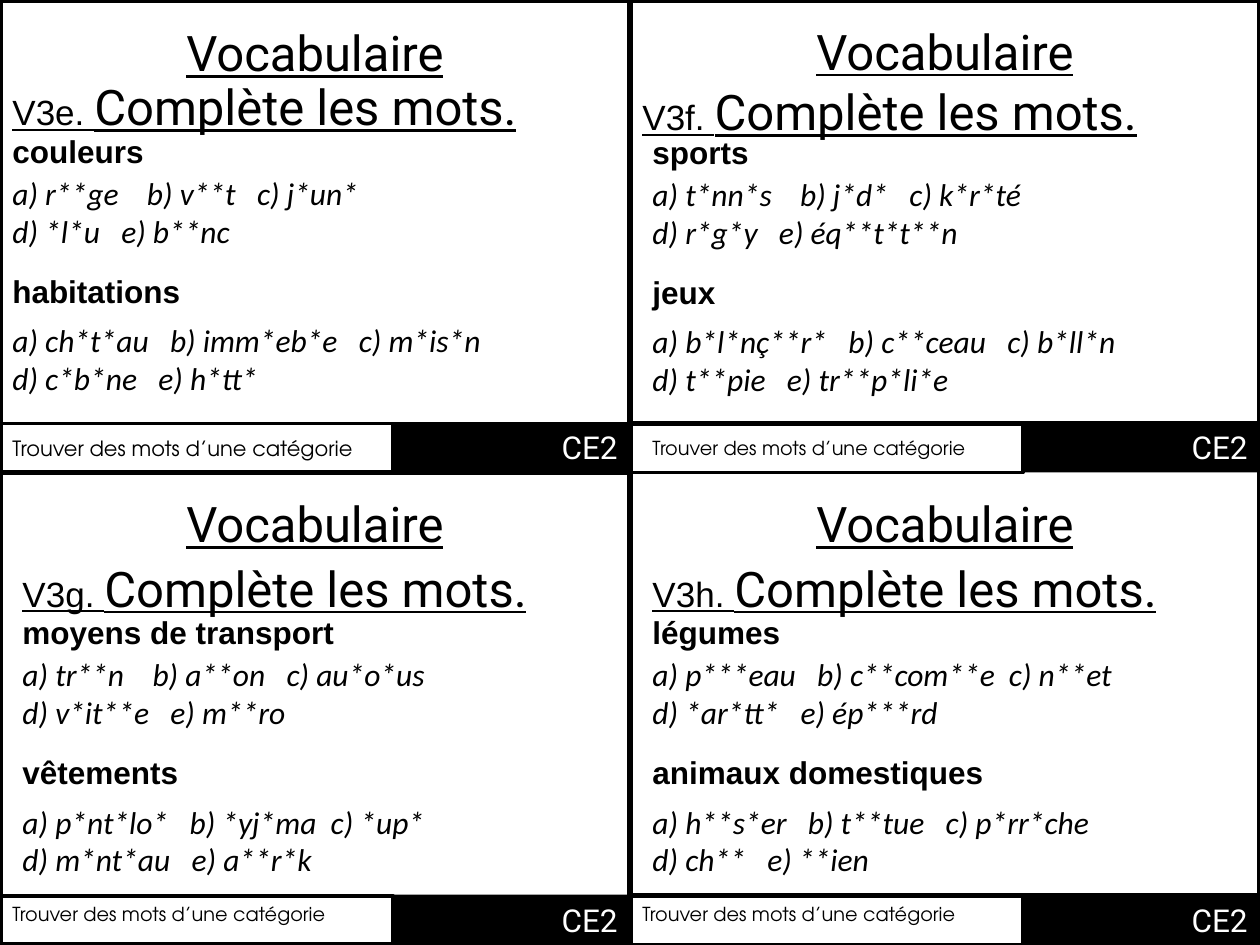
from dataclasses import dataclass

from pptx import Presentation
from pptx.dml.color import RGBColor
from pptx.enum.shapes import MSO_SHAPE
from pptx.enum.text import MSO_ANCHOR, MSO_AUTO_SIZE, PP_ALIGN
from pptx.util import Inches, Pt

RECTANGLE = MSO_SHAPE.RECTANGLE
LEFT, CENTER, RIGHT = PP_ALIGN.LEFT, PP_ALIGN.CENTER, PP_ALIGN.RIGHT
TOP = MSO_ANCHOR.TOP
GROW = MSO_AUTO_SIZE.SHAPE_TO_FIT_TEXT
BLACK = RGBColor(0, 0, 0)
WHITE = RGBColor(255, 255, 255)

SLIDE_W, SLIDE_H = 10, 7.5
CARD_W, CARD_H = SLIDE_W / 2, SLIDE_H / 2
LEGEND_W = CARD_W * 0.624
FOOTER_TOP = 3.36
INDENT = 0.08


@dataclass
class Card:
    """One quarter of the slide, with offsets measured from its corner."""
    column: int
    row: int
    code: str
    groups: list
    title_top: float = 0.12
    task_left: float = INDENT
    task_top: float = 0.63
    words_left: float = INDENT
    words_top: float = 1.07
    legend_left: float = 0
    legend_top: float = FOOTER_TOP
    legend_size: int = 11
    frame_shift: float = 0

    def place(self, left, top):
        """Return slide coordinates for an offset inside the card."""
        return self.column * CARD_W + left, self.row * CARD_H + top


CARDS = [
    Card(0, 0, "V3e. ", [
        ("couleurs", 1.25, ["a) r**ge    b) v**t   c) j*un*", "d) *l*u   e) b**nc"]),
        ("habitations", 2.03, ["a) ch*t*au   b) imm*eb*e   c) m*is*n", "d) c*b*ne   e) h*tt*"]),
    ], title_top=0.13, task_left=0, task_top=0.56, words_left=0, words_top=1,
        legend_top=3.41, legend_size=12),
    Card(1, 0, "V3f. ", [
        ("sports", 1.25, ["a) t*nn*s    b) j*d*   c) k*r*té", "d) r*g*y   e) éq**t*t**n"]),
        ("jeux", 2.66, ["a) b*l*nç**r*   b) c**ceau   c) b*ll*n", "d) t**pie   e) tr**p*li*e"]),
    ], task_left=0, task_top=0.6, words_top=1.01, legend_left=INDENT, legend_top=3.41),
    Card(0, 1, "V3g. ", [
        ("moyens de transport", 3.75, ["a) tr**n    b) a**on   c) au*o*us", "d) v*it**e   e) m**ro"]),
        ("vêtements", 2.97, ["a) p*nt*lo*   b) *yj*ma  c) *up*", "d) m*nt*au   e) a**r*k"]),
    ]),
    Card(1, 1, "V3h. ", [
        ("légumes", 1.25, ["a) p***eau   b) c**com**e  c) n**et", "d) *ar*tt*   e) ép***rd"]),
        ("animaux domestiques", 4.45, ["a) h**s*er   b) t**tue   c) p*rr*che", "d) ch**   e) **ien"]),
    ], frame_shift=-0.39),
]


def set_font(font, name, size, color=BLACK, **style):
    """Set typeface, size, colour and any bold, italic or underline."""
    font.name, font.size = name, Pt(size)
    font.color.rgb = color
    for key, value in style.items():
        setattr(font, key, value)


def add_box(slide, position, size, fill=None, line_width=0):
    """Add a plain rectangle with an optional fill and black outline."""
    box = slide.shapes.add_shape(RECTANGLE, *map(Inches, position + size))
    box.shadow.inherit = False
    if fill is None:
        box.fill.background()
    else:
        box.fill.solid()
        box.fill.fore_color.rgb = fill
    if line_width:
        box.line.color.rgb = BLACK
        box.line.width = Pt(line_width)
    else:
        box.line.fill.background()
    return box


def fill_text(frame, lines, font, size, align=LEFT, hanging=0, **style):
    """Write one paragraph per line in a single font."""
    frame.word_wrap = True
    frame.auto_size = GROW
    frame.vertical_anchor = TOP
    for index, line in enumerate(lines):
        paragraph = frame.add_paragraph() if index else frame.paragraphs[0]
        paragraph.text = line
        paragraph.alignment = align
        set_font(paragraph.font, font, size, **style)
        if hanging:
            properties = paragraph._p.get_or_add_pPr()
            properties.set("marL", str(Inches(hanging)))
            properties.set("indent", str(-Inches(hanging)))


def add_text(slide, position, size, lines, font, points, **options):
    """Add a text box and return its frame."""
    frame = slide.shapes.add_textbox(*map(Inches, position + size)).text_frame
    fill_text(frame, lines, font, points, **options)
    return frame


def add_task(slide, card):
    """Add the underlined exercise code and its instruction."""
    frame = add_text(slide, card.place(card.task_left, card.task_top), (4.92, 0.57),
                     [card.code], "Arial", 20, underline=True)
    instruction = frame.paragraphs[0].add_run()
    instruction.text = "Complète les mots."
    set_font(instruction.font, "Roboto", 28, underline=True)


def add_footer(slide, card):
    """Add the skill legend and the class level at the foot of a card."""
    level = add_box(slide, card.place(LEGEND_W, 3.35), (CARD_W - LEGEND_W, 0.4), BLACK)
    fill_text(level.text_frame, ["CE2"], "Roboto", 18, align=RIGHT, color=WHITE)
    add_box(slide, card.place(0, FOOTER_TOP), (LEGEND_W, 0.39), line_width=2)
    add_text(slide, card.place(card.legend_left, card.legend_top), (LEGEND_W, 0.3),
             ["Trouver des mots d’une catégorie"], "TeX Gyre Adventor", card.legend_size)


def add_words(slide, card):
    """Add each category heading with its incomplete words."""
    for index, (category, width, words) in enumerate(card.groups):
        top = card.words_top + index * 1.11
        add_text(slide, card.place(card.words_left, top), (width, 0.4),
                 [category], "Arial", 18, bold=True)
        add_text(slide, card.place(card.words_left, top + 0.33 + index * 0.06), (4.38, 0.71),
                 words, "Calibri", 18, hanging=0.38, italic=True)


def main():
    """Build the slide of four vocabulary cards."""
    presentation = Presentation()
    presentation.slide_width, presentation.slide_height = Inches(SLIDE_W), Inches(SLIDE_H)
    slide = presentation.slides.add_slide(presentation.slide_layouts[6])
    for card in CARDS:
        add_box(slide, card.place(0, card.frame_shift), (CARD_W, CARD_H), WHITE, 3)
    for card in CARDS:
        add_text(slide, card.place(0, card.title_top), (CARD_W, 0.57),
                 ["Vocabulaire"], "Roboto", 28, align=CENTER, underline=True)
        add_task(slide, card)
        add_footer(slide, card)
        add_words(slide, card)
    presentation.save("out.pptx")


if __name__ == "__main__":
    main()
